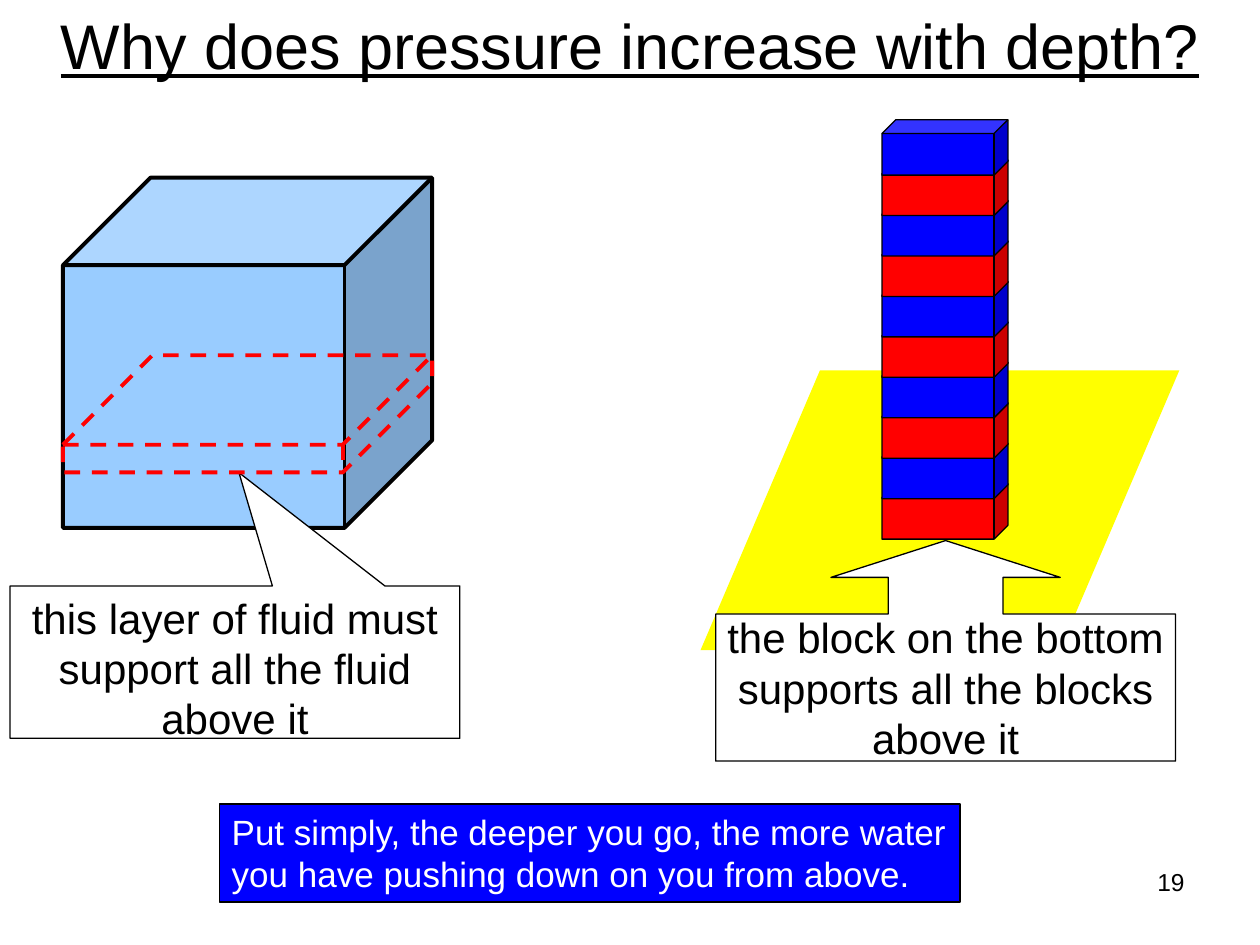
"""Build a slide that explains why pressure increases with depth."""
from dataclasses import dataclass, field
from typing import Any

from pptx import Presentation
from pptx import util as u
from pptx.dml import color
from pptx.enum import dml, shapes, text

SLIDE_WIDTH, SLIDE_HEIGHT = u.Inches(10), u.Inches(7.5)
COLUMNS, ROWS = 100, 75
COLORS = {
    "ink": "000000", "paper": "FFFFFF", "floor": "FFFF00",
    "water": "99CCFF", "red": "FF0000", "blue": "0000FF",
}
FORM = shapes.MSO_SHAPE
ALIGN = text.PP_ALIGN
BLOCK_COUNT, BLOCK_TOP, BLOCK_STEP = 10, 9.5, 3.21


@dataclass(frozen=True)
class Cell:
    """A rectangle in grid columns and rows."""
    column: float
    row: float
    columns: float
    rows: float

    def emu(self) -> tuple[int, ...]:
        """Return left, top, width and height in slide units."""
        across, down = SLIDE_WIDTH / COLUMNS, SLIDE_HEIGHT / ROWS
        return (round(self.column * across), round(self.row * down),
                round(self.columns * across), round(self.rows * down))


@dataclass(frozen=True)
class Solid:
    """A preset outline with its place and paint."""
    form: Any
    cell: Cell
    fill: str | None
    line: str | None = "ink"
    weight: float = 0.75
    adjustments: tuple[float, ...] = ()
    dash: Any = None


@dataclass(frozen=True)
class Wording:
    """Paragraphs that share one look."""
    lines: tuple[str, ...]
    size: float
    ink: str = "ink"
    align: Any = ALIGN.CENTER
    underline: bool | None = None
    frame: dict[str, Any] = field(default_factory=dict)


def rgb(name: str) -> color.RGBColor:
    """Look up a named colour."""
    return color.RGBColor.from_string(COLORS[name])


def apply(target: Any, values: dict[str, Any]) -> None:
    """Set each attribute in values on target."""
    for key, value in values.items():
        setattr(target, key, value)


def draw(parent: Any, solid: Solid) -> Any:
    """Draw a solid among the parent's shapes."""
    shape = parent.add_shape(solid.form, *solid.cell.emu())
    shape.shadow.inherit = False
    for index, value in enumerate(solid.adjustments):
        shape.adjustments[index] = value
    for paint, name in ((shape.fill, solid.fill), (shape.line.fill, solid.line)):
        if name:
            paint.solid()
            paint.fore_color.rgb = rgb(name)
        else:
            paint.background()
    if solid.line:
        apply(shape.line, {"width": u.Pt(solid.weight), "dash_style": solid.dash})
    return shape


def write(shape: Any, wording: Wording) -> None:
    """Fill a shape with formatted paragraphs."""
    frame = shape.text_frame
    apply(frame, {"word_wrap": True, "vertical_anchor": text.MSO_ANCHOR.TOP,
                  **wording.frame})
    for index, line in enumerate(wording.lines):
        paragraph = frame.add_paragraph() if index else frame.paragraphs[0]
        paragraph.alignment = wording.align
        run = paragraph.add_run()
        run.text = line
        apply(run.font, {"name": "Arial", "size": u.Pt(wording.size),
                         "underline": wording.underline})
        run.font.color.rgb = rgb(wording.ink)


def stack_blocks(parent: Any) -> None:
    """Pile up blocks of alternating colour, bottom block first."""
    tower = parent.add_group_shape().shapes
    for level in range(BLOCK_COUNT):
        row = BLOCK_TOP + BLOCK_STEP * (BLOCK_COUNT - 1 - level)
        draw(tower, Solid(FORM.CUBE, Cell(70, row, 10, 4.4),
                          ("red", "blue")[level % 2], adjustments=(0.25,)))


def main() -> None:
    """Compose and save the slide."""
    deck = Presentation()
    apply(deck, {"slide_width": SLIDE_WIDTH, "slide_height": SLIDE_HEIGHT})
    canvas = deck.slides.add_slide(deck.slide_layouts[6]).shapes
    grow = {"auto_size": text.MSO_AUTO_SIZE.SHAPE_TO_FIT_TEXT}

    draw(canvas, Solid(FORM.PARALLELOGRAM, Cell(55.6, 29.4, 38, 22.2), "floor",
                       None, adjustments=(0.427,)))
    draw(canvas, Solid(FORM.CUBE, Cell(5, 14.1, 29.3, 27.8), "water",
                       weight=2.25, adjustments=(0.25,)))
    fluid_note = draw(canvas, Solid(
        FORM.RECTANGULAR_CALLOUT, Cell(0.8, 46.5, 35.7, 12.1), "paper",
        adjustments=(0.009, -1.243)))
    write(fluid_note, Wording(
        ("this layer of fluid must", "support all the fluid above it"), 24))

    stack_blocks(canvas)
    block_note = draw(canvas, Solid(
        FORM.UP_ARROW_CALLOUT, Cell(56.8, 42.9, 36.5, 17.5), "paper",
        adjustments=(0.52, 0.52, 0.167, 0.667)))
    write(block_note, Wording(
        ("the block on the bottom", "supports all the blocks", "above it"), 24,
        frame={"word_wrap": False, "vertical_anchor": text.MSO_ANCHOR.MIDDLE}))

    title = canvas.add_textbox(*Cell(0, 0, 100, 7).emu())
    write(title, Wording(("Why does pressure increase with depth?",), 36,
                         underline=True, frame=grow))
    summary = draw(canvas, Solid(FORM.RECTANGLE, Cell(17.4, 63.8, 58.8, 7.8), "blue"))
    write(summary, Wording(
        ("Put simply, the deeper you go, the more water",
         "you have pushing down on you from above."), 20, "paper", ALIGN.LEFT,
        frame={"word_wrap": False, **grow}))
    page_number = canvas.add_textbox(*Cell(71.7, 68.3, 23.3, 5.2).emu())
    write(page_number, Wording(("19",), 14, align=ALIGN.RIGHT))

    draw(canvas, Solid(FORM.CUBE, Cell(5, 28.2, 29.3, 9.3), None, "red", 2.25,
                       (0.764,), dml.MSO_LINE.DASH))
    deck.save("out.pptx")


if __name__ == "__main__":
    main()
